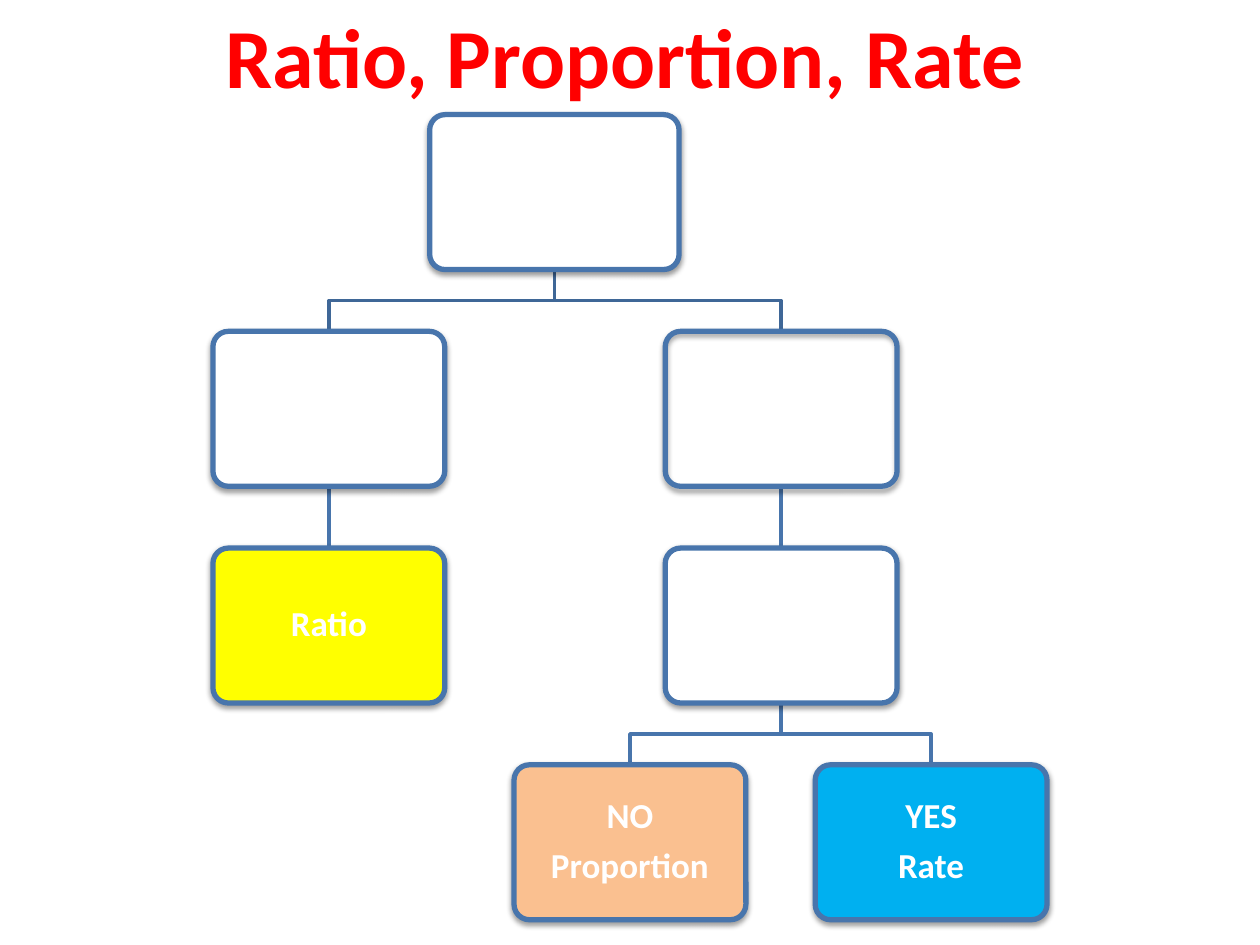
"""Build a decision tree slide for ratio, proportion and rate."""
import lxml.etree
import pptx
import pptx.dml.color
import pptx.enum.shapes
import pptx.enum.text
import pptx.oxml
import pptx.oxml.ns
import pptx.util

Inches = pptx.util.Inches
Pt = pptx.util.Pt
qn = pptx.oxml.ns.qn
MIDDLE = pptx.enum.text.MSO_ANCHOR.MIDDLE
ALIGN = pptx.enum.text.PP_ALIGN


def color(value):
    """Turn a hex string into a colour."""
    return pptx.dml.color.RGBColor.from_string(value)


def write(shape, lines, frame_format, paragraph_format, font_format, font_color):
    """Write one paragraph per line with the given formats."""
    for name, value in frame_format.items():
        setattr(shape.text_frame, name, value)
    shape.text_frame.text = "\n".join(lines)
    for paragraph in shape.text_frame.paragraphs:
        for name, value in paragraph_format.items():
            setattr(paragraph, name, value)
        for name, value in font_format.items():
            setattr(paragraph.font, name, value)
        paragraph.font.color.rgb = color(font_color)


presentation = pptx.Presentation()
presentation.slide_width = Inches(10)
presentation.slide_height = Inches(7.5)
slide = presentation.slides.add_slide(presentation.slide_layouts[6])

BORDER = "4875AC"
TOP, ROW_PITCH, BOX_HEIGHT = 0.91, 1.72, 1.23
LEFT_X, ROOT_X, RIGHT_X = 2.61, 4.4, 6.2
NO_X, YES_X = 5, 7.39

links = [
    (0, ROOT_X, LEFT_X, "3F6797"),
    (0, ROOT_X, RIGHT_X, "3F6797"),
    (1, LEFT_X, LEFT_X, BORDER),
    (1, RIGHT_X, RIGHT_X, BORDER),
    (2, RIGHT_X, NO_X, BORDER),
    (2, RIGHT_X, YES_X, BORDER),
]
for row, parent_x, child_x, line_color in links:
    start = TOP + row * ROW_PITCH + BOX_HEIGHT
    end = TOP + (row + 1) * ROW_PITCH
    middle = (start + end) / 2
    if parent_x == child_x:
        link = slide.shapes.add_connector(
            pptx.enum.shapes.MSO_CONNECTOR.STRAIGHT,
            Inches(parent_x), Inches(start), Inches(child_x), Inches(end))
        properties = link.element.find(qn("p:spPr"))
    else:
        builder = slide.shapes.build_freeform(Inches(parent_x), Inches(start))
        bends = [(parent_x, middle), (child_x, middle), (child_x, end)]
        builder.add_line_segments(
            [(Inches(x), Inches(y)) for x, y in bends], close=False)
        link = builder.convert_to_shape()
        link.fill.background()
    link.line.color.rgb = color(line_color)
    link.line.width = Pt(2)
    if parent_x == child_x:
        lxml.etree.SubElement(properties, qn("a:effectLst"))
    else:
        link.shadow.inherit = False

box_frame = {"vertical_anchor": MIDDLE, "word_wrap": True}
box_frame.update({f"margin_{side}": Inches(0.1)
                  for side in ("left", "right", "top", "bottom")})
box_paragraph = {"alignment": ALIGN.CENTER, "line_spacing": 0.9, "space_after": Pt(7)}
box_font = {"name": "Calibri", "size": Pt(20), "bold": True}

boxes = [
    (0, ROOT_X, 1.98, "FFFFFF", []),
    (1, LEFT_X, 1.84, "FFFFFF", []),
    (2, LEFT_X, 1.84, "FFFF00", ["Ratio"]),
    (1, RIGHT_X, 1.84, None, []),
    (2, RIGHT_X, 1.84, "FFFFFF", []),
    (3, NO_X, 1.84, "FAC090", ["NO", "Proportion"]),
    (3, YES_X, 1.84, "00B0F0", ["YES", "Rate"]),
]
for row, center, width, fill_color, lines in boxes:
    box = slide.shapes.add_shape(
        pptx.enum.shapes.MSO_SHAPE.ROUNDED_RECTANGLE,
        Inches(center - width / 2), Inches(TOP + row * ROW_PITCH),
        Inches(width), Inches(BOX_HEIGHT))
    box.adjustments[0] = 0.1
    if fill_color:
        box.fill.solid()
        box.fill.fore_color.rgb = color(fill_color)
    else:
        box.fill.background()
    box.line.color.rgb = color(BORDER)
    box.line.width = Pt(3)
    box.shadow.inherit = False
    effects = box.element.spPr.find(qn("a:effectLst"))
    shadow = lxml.etree.SubElement(
        effects, qn("a:outerShdw"), blurRad=str(Pt(3.1)), dist=str(Pt(1.6)),
        dir="5400000", rotWithShape="0")
    shade = lxml.etree.SubElement(shadow, qn("a:srgbClr"), val="000000")
    lxml.etree.SubElement(shade, qn("a:alpha"), val="38000")
    if lines:
        write(box, lines, box_frame, box_paragraph, box_font, "FFFFFF")

title = slide.shapes.add_textbox(Inches(1.69), Inches(0.05), Inches(7.32), Inches(0.77))
write(title, ["Ratio, Proportion, Rate"],
      {"vertical_anchor": MIDDLE, "word_wrap": True},
      {"alignment": ALIGN.LEFT},
      {"name": "Calibri", "size": Pt(48), "bold": True}, "FF0000")

presentation.save("out.pptx")
